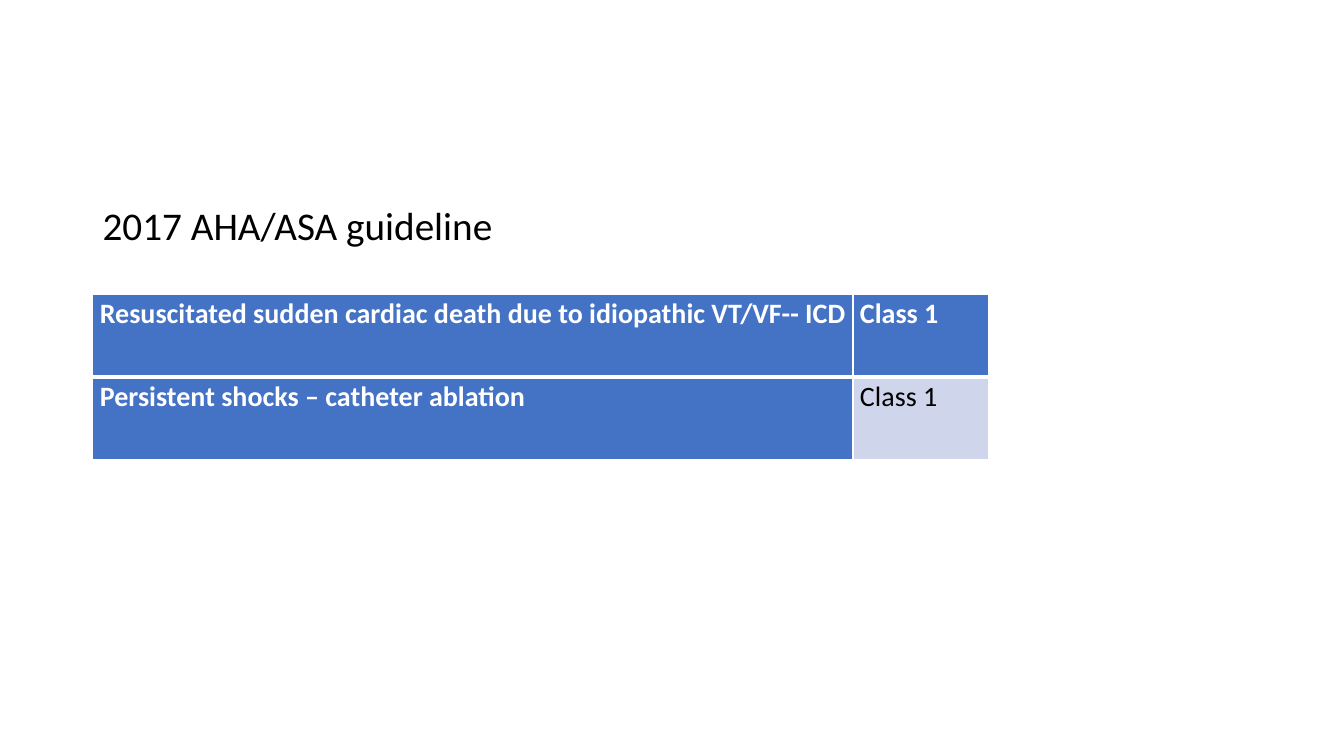
from lxml.etree import SubElement
from pptx import Presentation
from pptx.dml.color import RGBColor
from pptx.oxml.ns import qn
from pptx.util import Inches, Pt

HEADING = "2017 AHA/ASA guideline"
RECOMMENDATIONS = [
    ("Resuscitated sudden cardiac death due to idiopathic VT/VF-- ICD", "Class 1"),
    ("Persistent shocks – catheter ablation", "Class 1"),
]
FONT = "Calibri"
WHITE, BLACK, BLUE, PALE = "FFFFFF", "000000", "4472C4", "CFD5EA"
LEFT, BODY_TOP, TABLE_TOP = 0.92, 2, 2.92
BODY_WIDTH, BODY_HEIGHT = 11.5, 4.76
COLUMNS = (7.54, 1.35)
ROW_HEIGHT = 0.82
CELL_INSET = 0.07
THIN, THICK = 1, 3


def rgb(value):
    return RGBColor.from_string(value)


def write(paragraph, text, size, colour, bold=False):
    run = paragraph.add_run()
    run.text = text
    font = run.font
    font.name, font.size, font.bold = FONT, Pt(size), bold
    font.color.rgb = rgb(colour)


def add_borders(cell, widths):
    """Draw white cell borders; widths maps L, R, T, B to points, in that order."""
    properties = cell._tc.get_or_add_tcPr()
    for side, width in widths.items():
        line = SubElement(properties, qn(f"a:ln{side}"), w=str(Pt(width)))
        fill = SubElement(line, qn("a:solidFill"))
        SubElement(fill, qn("a:srgbClr"), val=WHITE)


def add_heading(slide):
    box = slide.shapes.add_textbox(
        Inches(LEFT), Inches(BODY_TOP), Inches(BODY_WIDTH), Inches(BODY_HEIGHT))
    box.text_frame.word_wrap = True
    paragraph = box.text_frame.paragraphs[0]
    paragraph.line_spacing = 0.9
    paragraph.space_before = Pt(10)
    write(paragraph, HEADING, 28, BLACK)


def add_recommendations(slide):
    count = len(RECOMMENDATIONS)
    table = slide.shapes.add_table(
        count, len(COLUMNS), Inches(LEFT), Inches(TABLE_TOP),
        Inches(sum(COLUMNS)), Inches(ROW_HEIGHT * count)).table
    for column, width in zip(table.columns, COLUMNS):
        column.width = Inches(width)
    for r, recommendation in enumerate(RECOMMENDATIONS):
        table.rows[r].height = Inches(ROW_HEIGHT)
        for c, text in enumerate(recommendation):
            cell = table.cell(r, c)
            emphasised = r == 0 or c == 0
            cell.margin_left = cell.margin_right = Inches(CELL_INSET)
            cell.margin_top = cell.margin_bottom = 0
            add_borders(cell, {"L": THIN, "R": THIN,
                               "T": THICK if r == 1 else THIN,
                               "B": THICK if r == 0 else THIN})
            cell.fill.solid()
            cell.fill.fore_color.rgb = rgb(BLUE if emphasised else PALE)
            paragraph = cell.text_frame.paragraphs[0]
            paragraph.line_spacing = 1.07
            paragraph.space_after = Pt(8)
            write(paragraph, text, 20, WHITE if emphasised else BLACK, emphasised)


def main():
    deck = Presentation()
    deck.slide_width, deck.slide_height = Inches(13.33), Inches(7.5)
    slide = deck.slides.add_slide(deck.slide_layouts[6])
    add_heading(slide)
    add_recommendations(slide)
    deck.save("out.pptx")


if __name__ == "__main__":
    main()
